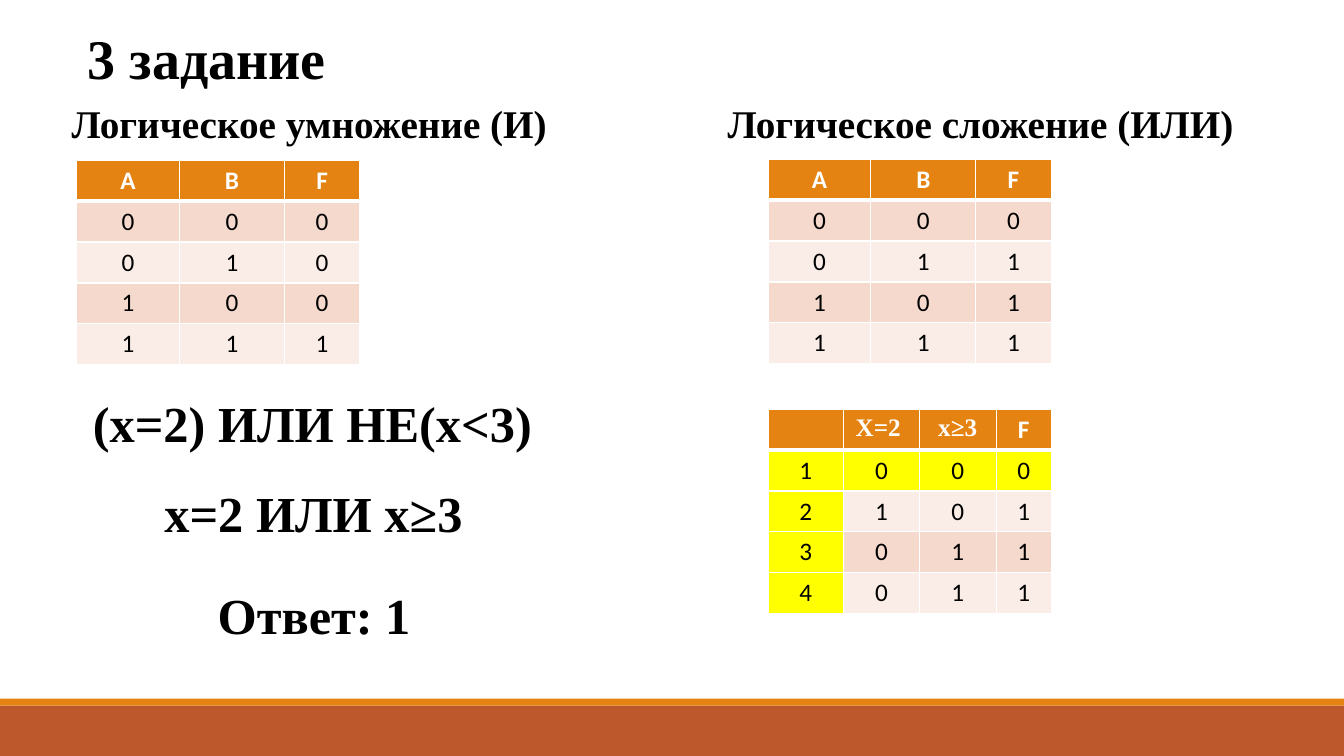
from dataclasses import dataclass

from lxml import etree
from pptx import Presentation
from pptx import util as u
from pptx.dml.color import RGBColor
from pptx.enum import shapes, text
from pptx.oxml import ns


@dataclass(frozen=True)
class Theme:
    orange: str = "E48312"
    rust: str = "BD582C"
    white: str = "FFFFFF"
    black: str = "000000"
    yellow: str = "FFFF00"
    bands: tuple[str, str] = ("F5D9CC", "FAEDE7")
    serif: str = "Times New Roman"
    sans: str = "Calibri"
    title: float = 40
    heading: float = 28
    formula: float = 36
    cell: float = 18


@dataclass(frozen=True)
class Box:
    left: float
    top: float
    width: float
    height: float


@dataclass(frozen=True)
class Label:
    words: str
    box: Box


@dataclass(frozen=True)
class TruthTable:
    left: float
    top: float
    widths: tuple[float, ...]
    header: tuple[str, ...]
    rows: tuple[str, ...]
    serif_headers: tuple[str, ...] = ()
    marked_row: int = 0
    marked_col: int = -1


T = Theme()
ROW_HEIGHT = 29.2
AB_WIDTHS = (73.5, 75, 53.8)
AB_HEADER = ("A", "B", "F")

BARS = (
    (T.rust, Box(0, 504, 960, 36)),
    (T.orange, Box(0, 499, 960, 5)),
)
TITLE = Label("3 задание", Box(44, 21, 720, 48))
HEADINGS = {
    1: Label("Логическое умножение (И)", Box(44, 65.5, 450, 48)),
    3: Label("Логическое сложение (ИЛИ)", Box(512.6, 65.5, 440, 48)),
}
FORMULAS = (
    Label("(x=2) ИЛИ НЕ(x<3)", Box(23.8, 273.6, 367, 52)),
    Label("x=2 ИЛИ x≥3", Box(74.9, 337.7, 265.7, 54)),
    Label("Ответ: 1", Box(113, 411, 189.4, 54)),
)
TABLES = (
    TruthTable(54.7, 114.5, AB_WIDTHS, AB_HEADER, ("000", "010", "100", "111")),
    TruthTable(548.6, 113.8, AB_WIDTHS, AB_HEADER, ("000", "011", "101", "111")),
    TruthTable(548.6, 292.3, (54, 54, 55, 39.3), ("", "X=2 ", "x≥3", "F"),
               ("1000", "2101", "3011", "4011"),
               serif_headers=("X=2 ", "x≥3"), marked_row=1, marked_col=0),
)


def write(tf, words: str, *, size: float, font: str = T.serif, color: str = T.black,
          bold: bool = True, align=text.PP_ALIGN.LEFT, line: float | None = None,
          before: float = 0, after: float = 0, margin: float = 0,
          indent: float = 0) -> None:
    p = tf.paragraphs[0]
    p.alignment = align
    p.space_before, p.space_after = u.Pt(before), u.Pt(after)
    if line:
        p.line_spacing = line
    pPr = p._p.get_or_add_pPr()
    pPr.set("marL", str(u.Pt(margin)))
    pPr.set("indent", str(u.Pt(indent)))
    if not words:
        p.font.size = u.Pt(size)
        return
    r = p.add_run()
    r.text = words
    r.font.name, r.font.size, r.font.bold = font, u.Pt(size), bold
    r.font.color.rgb = RGBColor.from_string(color)


def place(sp, box: Box) -> None:
    sp.left, sp.top = u.Pt(box.left), u.Pt(box.top)
    sp.width, sp.height = u.Pt(box.width), u.Pt(box.height)


def fill_placeholder(sp, label: Label, **fmt) -> None:
    place(sp, label.box)
    tf = sp.text_frame
    tf.word_wrap = True
    tf.auto_size = text.MSO_AUTO_SIZE.NONE
    tf.vertical_anchor = text.MSO_ANCHOR.MIDDLE
    write(tf, label.words, before=12, after=2, **fmt)


def add_bar(s, color: str, box: Box) -> None:
    sp = s.shapes.add_shape(shapes.MSO_SHAPE.RECTANGLE, 0, 0, 0, 0)
    place(sp, box)
    sp.shadow.inherit = False
    sp.fill.solid()
    sp.fill.fore_color.rgb = RGBColor.from_string(color)
    sp.line.fill.background()


def add_formula(s, label: Label) -> None:
    sp = s.shapes.add_textbox(0, 0, 0, 0)
    place(sp, label.box)
    sp.text_frame.word_wrap = False
    write(sp.text_frame, label.words, size=T.formula, line=1.07, indent=35.4,
          align=text.PP_ALIGN.JUSTIFY)


def set_borders(cell, bottom: float) -> None:
    tcPr = cell._tc.get_or_add_tcPr()
    for side, width in (("L", 1), ("R", 1), ("T", 1), ("B", bottom)):
        ln = etree.SubElement(tcPr, ns.qn(f"a:ln{side}"), w=str(u.Pt(width)))
        solid = etree.SubElement(ln, ns.qn("a:solidFill"))
        etree.SubElement(solid, ns.qn("a:srgbClr"), val=T.white)


def cell_color(table: TruthTable, row: int, col: int) -> str:
    if row == 0:
        return T.orange
    if row == table.marked_row or col == table.marked_col:
        return T.yellow
    return T.bands[(row - 1) % 2]


def add_truth_table(s, table: TruthTable) -> None:
    grid = (table.header, *table.rows)
    tbl = s.shapes.add_table(
        len(grid), len(table.widths), u.Pt(table.left), u.Pt(table.top),
        u.Pt(sum(table.widths)), u.Pt(ROW_HEIGHT * len(grid))).table
    for column, width in zip(tbl.columns, table.widths):
        column.width = u.Pt(width)
    for i, values in enumerate(grid):
        tbl.rows[i].height = u.Pt(ROW_HEIGHT)
        for j, value in enumerate(values):
            cell = tbl.cell(i, j)
            set_borders(cell, 3 if i == 0 else 1)
            cell.fill.solid()
            cell.fill.fore_color.rgb = RGBColor.from_string(cell_color(table, i, j))
            write(cell.text_frame, value, size=T.cell, bold=i == 0,
                  color=T.black if i else T.white, align=text.PP_ALIGN.CENTER,
                  font=T.serif if value in table.serif_headers else T.sans)


def main() -> None:
    prs = Presentation()
    prs.slide_width, prs.slide_height = u.Pt(960), u.Pt(540)
    s = prs.slides.add_slide(prs.slide_layouts.get_by_name("Comparison"))
    fill_placeholder(s.shapes.title, TITLE, size=T.title, line=0.8, margin=11.5)
    for sp in list(s.placeholders):
        idx = sp.placeholder_format.idx
        if idx in HEADINGS:
            fill_placeholder(sp, HEADINGS[idx], size=T.heading, line=0.9)
        elif idx:
            sp.element.getparent().remove(sp.element)
    for color, box in BARS:
        add_bar(s, color, box)
    for table in TABLES:
        add_truth_table(s, table)
    for formula in FORMULAS:
        add_formula(s, formula)
    prs.save("out.pptx")


if __name__ == "__main__":
    main()
